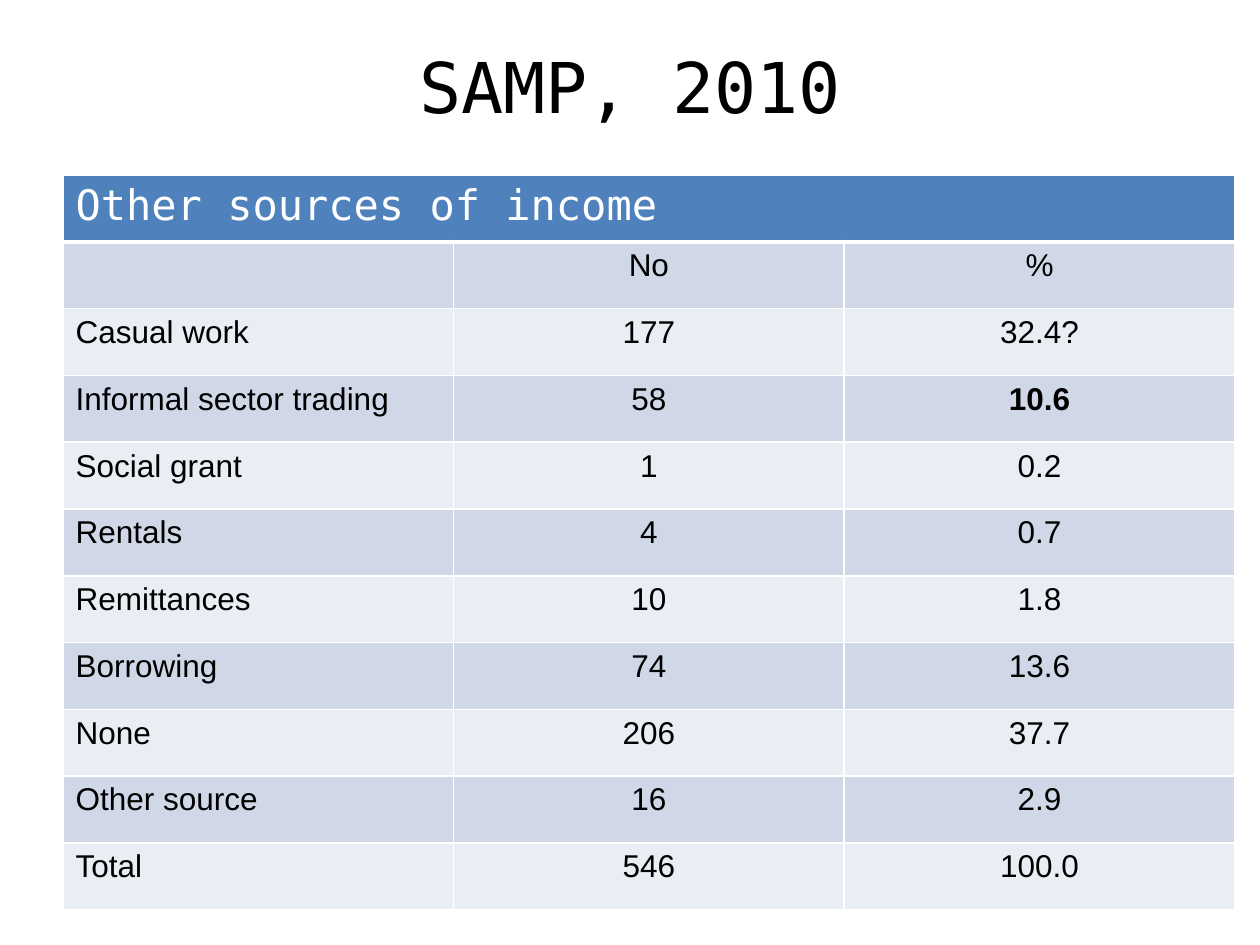
from dataclasses import dataclass
from typing import NamedTuple

from lxml.etree import SubElement
from pptx import Presentation
from pptx.dml.color import RGBColor as RGB
from pptx.enum.text import MSO_ANCHOR as Anchor, PP_ALIGN as Align
from pptx.oxml.ns import qn
from pptx.util import Inches, Pt


@dataclass(frozen=True)
class Theme:
    ink: str = "000000"
    paper: str = "FFFFFF"
    header: str = "4F81BD"
    bands: tuple[str, str] = ("D0D8E8", "E9EDF4")
    mono: str = "DejaVu Sans Mono"
    sans: str = "Arial"
    title_size: int = 40
    header_size: int = 24
    body_size: int = 18
    rule: int = 1
    header_rule: int = 3


class Income(NamedTuple):
    source: str
    number: str
    percent: str
    bold_percent: bool = False


class Box(NamedTuple):
    left: float
    top: float
    width: float
    height: float


THEME = Theme()
SLIDE_W, SLIDE_H = Inches(10), Inches(7.5)
TITLE_BOX = Box(0.05, 0.04, 0.9, 0.1)
COLUMN_W, ROW_H = Inches(3.1), Inches(0.53)
TABLE_LEFT, TABLE_TOP = Inches(0.5), Inches(1.39)
HEADING = "Other sources of income"
INCOMES = [
    Income("", "No", "%"),
    Income("Casual work", "177", "32.4?"),
    Income("Informal sector trading", "58", "10.6", True),
    Income("Social grant", "1", "0.2"),
    Income("Rentals", "4", "0.7"),
    Income("Remittances", "10", "1.8"),
    Income("Borrowing", "74", "13.6"),
    Income("None", "206", "37.7"),
    Income("Other source", "16", "2.9"),
    Income("Total", "546", "100.0"),
]


def add_text(tf, text: str, size: int, font: str, color: str,
             align: Align = Align.LEFT, bold: bool = False) -> None:
    p = tf.paragraphs[0]
    p.alignment = align
    if not text:
        p.font.size = Pt(size)
        return
    r = p.add_run()
    r.text = text
    r.font.size = Pt(size)
    r.font.name = font
    r.font.bold = bold
    r.font.color.rgb = RGB.from_string(color)


def style_cell(cell, fill: str, top: int, bottom: int) -> None:
    tc_pr = cell._tc.get_or_add_tcPr()
    widths = {"L": THEME.rule, "R": THEME.rule, "T": top, "B": bottom}
    for side, width in widths.items():
        ln = SubElement(tc_pr, qn(f"a:ln{side}"), w=str(Pt(width)))
        solid = SubElement(ln, qn("a:solidFill"))
        SubElement(solid, qn("a:srgbClr"), val=THEME.paper)
    cell.fill.solid()
    cell.fill.fore_color.rgb = RGB.from_string(fill)


def add_title(s, text: str, box: Box) -> None:
    sp = s.shapes.title
    sp.left, sp.width = int(SLIDE_W * box.left), int(SLIDE_W * box.width)
    sp.top, sp.height = int(SLIDE_H * box.top), int(SLIDE_H * box.height)
    tf = sp.text_frame
    tf.vertical_anchor = Anchor.MIDDLE
    add_text(tf, text, THEME.title_size, THEME.mono, THEME.ink, Align.CENTER)


def add_income_table(s, heading: str, incomes: list[Income]) -> None:
    rows, cols = len(incomes) + 1, 3
    table = s.shapes.add_table(rows, cols, TABLE_LEFT, TABLE_TOP,
                               COLUMN_W * cols, ROW_H * rows).table
    for column in table.columns:
        column.width = COLUMN_W
    for row in table.rows:
        row.height = ROW_H

    table.cell(0, 0).merge(table.cell(0, cols - 1))
    for col in range(cols):
        style_cell(table.cell(0, col), THEME.header, THEME.rule, THEME.header_rule)
    add_text(table.cell(0, 0).text_frame, heading,
             THEME.header_size, THEME.mono, THEME.paper)

    for i, income in enumerate(incomes):
        top = THEME.rule if i else THEME.header_rule
        for col, text in enumerate(income[:cols]):
            cell = table.cell(i + 1, col)
            style_cell(cell, THEME.bands[i % 2], top, THEME.rule)
            add_text(cell.text_frame, text, THEME.body_size, THEME.sans, THEME.ink,
                     Align.CENTER if col else Align.LEFT,
                     income.bold_percent and col == cols - 1)


def main() -> None:
    prs = Presentation()
    prs.slide_width, prs.slide_height = SLIDE_W, SLIDE_H
    s = prs.slides.add_slide(prs.slide_layouts.get_by_name("Title Only"))
    add_title(s, "SAMP, 2010", TITLE_BOX)
    add_income_table(s, HEADING, INCOMES)
    prs.save("out.pptx")


if __name__ == "__main__":
    main()
